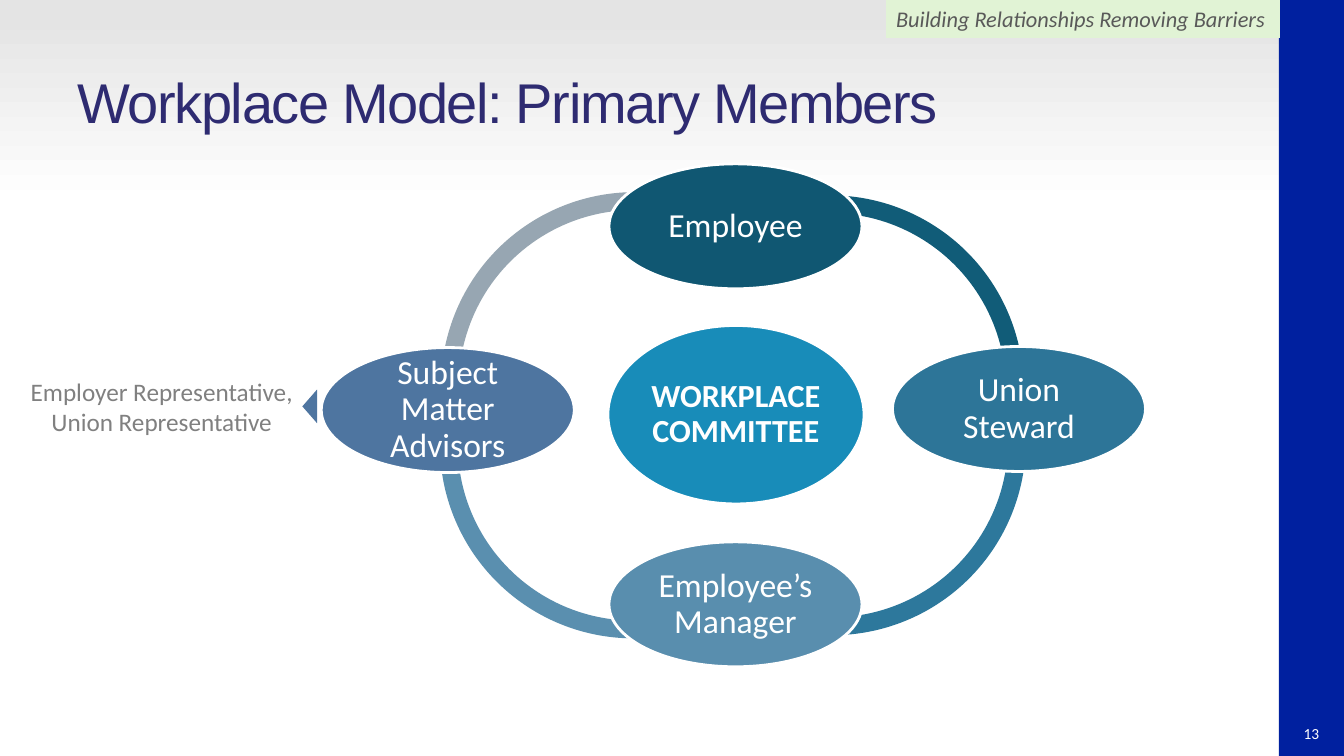
from dataclasses import dataclass

from pptx import Presentation
from pptx.dml.color import RGBColor as RGB
from pptx.enum.shapes import MSO_SHAPE as Form
from pptx.enum.text import MSO_ANCHOR as Anchor, PP_ALIGN as Align
from pptx.util import Pt


@dataclass(frozen=True)
class Theme:
    sans: str = "Calibri"
    head: str = "Arial"
    white: str = "FFFFFF"
    haze: str = "E4E4E4"
    navy: str = "00209F"
    mint: str = "E1F3D5"
    slate: str = "595959"
    gray: str = "808080"
    title: str = "2E2B71"
    core: str = "188CB9"
    advice: str = "4E75A0"
    title_pt: int = 40
    node_pt: int = 24
    core_pt: int = 23
    note_pt: int = 18
    tag_pt: int = 16
    page_pt: int = 11


T = Theme()
SCALE = 9525

NODES = [
    ("Employee", 580, 156, "105772"),
    ("Union Steward", 850, 330, "2D7598"),
    ("Employee’s Manager", 580, 516, "598EAE"),
    ("Subject Matter Advisors", 306, 331, T.advice),
]
ARCS = [
    (420, 183, 172.75, 301.99, "97A6B2"),
    (419, 239, 57.4, 190.56, "5A8FAF"),
    (608, 236, 350.1, 120.6, "2D789C"),
    (606, 186, 240.06, 5.78, "115C78"),
]


def px(*sizes):
    return [size * SCALE for size in sizes]


def write(shape, text, size, color, align=Align.CENTER, face=T.sans,
          bold=False, slant=False, space=1.0, pad=None, wrap=True):
    frame = shape.text_frame
    frame.text = text
    frame.word_wrap = wrap
    frame.vertical_anchor = Anchor.MIDDLE
    if pad is not None:
        frame.margin_left = frame.margin_right = pad * SCALE
        frame.margin_top = frame.margin_bottom = pad * SCALE
    for para in frame.paragraphs:
        para.alignment = align
        para.line_spacing = space
        for run in para.runs:
            font = run.font
            font.name, font.size = face, Pt(size)
            font.bold, font.italic = bold, slant
            font.color.rgb = RGB.from_string(color)


def draw(slide, form, box, fill=None, edge=None):
    shape = slide.shapes.add_shape(form, *px(*box))
    shape.shadow.inherit = False
    if fill:
        shape.fill.solid()
        shape.fill.fore_color.rgb = RGB.from_string(fill)
    else:
        shape.fill.background()
    if edge:
        shape.line.color.rgb = RGB.from_string(edge)
        shape.line.width = Pt(2)
    else:
        shape.line.fill.background()
    return shape


def arc(slide, left, top, start, end, color):
    shape = draw(slide, Form.BLOCK_ARC, (left, top, 369, 369), color)
    shape.adjustments[0] = start * 0.6
    shape.adjustments[1] = end * 0.6
    shape.adjustments[2] = 0.046


def oval(slide, text, box, color, size=T.node_pt, bold=False):
    shape = draw(slide, Form.OVAL, box, color, T.white)
    write(shape, text, size, T.white, bold=bold, space=0.9, pad=3)


def shade(slide):
    fill = slide.background.fill
    fill.gradient()
    fill.gradient_angle = 90
    for stop, place, color in zip(fill.gradient_stops, (0.73, 0.98), (T.white, T.haze)):
        stop.position = place
        stop.color.rgb = RGB.from_string(color)


def frame(slide):
    draw(slide, Form.RECTANGLE, (1218, 0, 62, 720), T.navy)
    tag = draw(slide, Form.RECTANGLE, (844, 0, 375, 36), T.mint)
    write(tag, "Building Relationships Removing Barriers", T.tag_pt, T.slate,
          align=Align.LEFT, slant=True, wrap=False)
    page = draw(slide, Form.DOUBLE_BRACKET, (1227, 686, 44, 24))
    write(page, "13", T.page_pt, T.white, pad=0)


def name(slide, text):
    title = slide.shapes.title
    title.left, title.top, title.width, title.height = px(64, 36, 1153, 120)
    write(title, text, T.title_pt, T.title, align=Align.LEFT, face=T.head)
    for run in title.text_frame.paragraphs[0].runs:
        run.font._element.set("spc", "-100")


def note(slide, text):
    label = slide.shapes.add_textbox(*px(18, 353, 272, 68))
    write(label, text, T.note_pt, T.gray)
    tip = draw(slide, Form.ISOSCELES_TRIANGLE, (279, 380, 32, 14), T.advice)
    tip.rotation = 270


def main():
    deck = Presentation()
    deck.slide_width, deck.slide_height = px(1280, 720)
    slide = deck.slides.add_slide(deck.slide_layouts[5])
    shade(slide)
    frame(slide)
    name(slide, "Workplace Model: Primary Members")
    oval(slide, "WORKPLACE COMMITTEE", (579, 310, 244, 170), T.core, T.core_pt, True)
    for item in ARCS:
        arc(slide, *item)
    for text, left, top, color in NODES:
        oval(slide, text, (left, top, 241, 119), color)
    note(slide, "Employer Representative,\nUnion Representative")
    deck.save("out.pptx")


if __name__ == "__main__":
    main()
